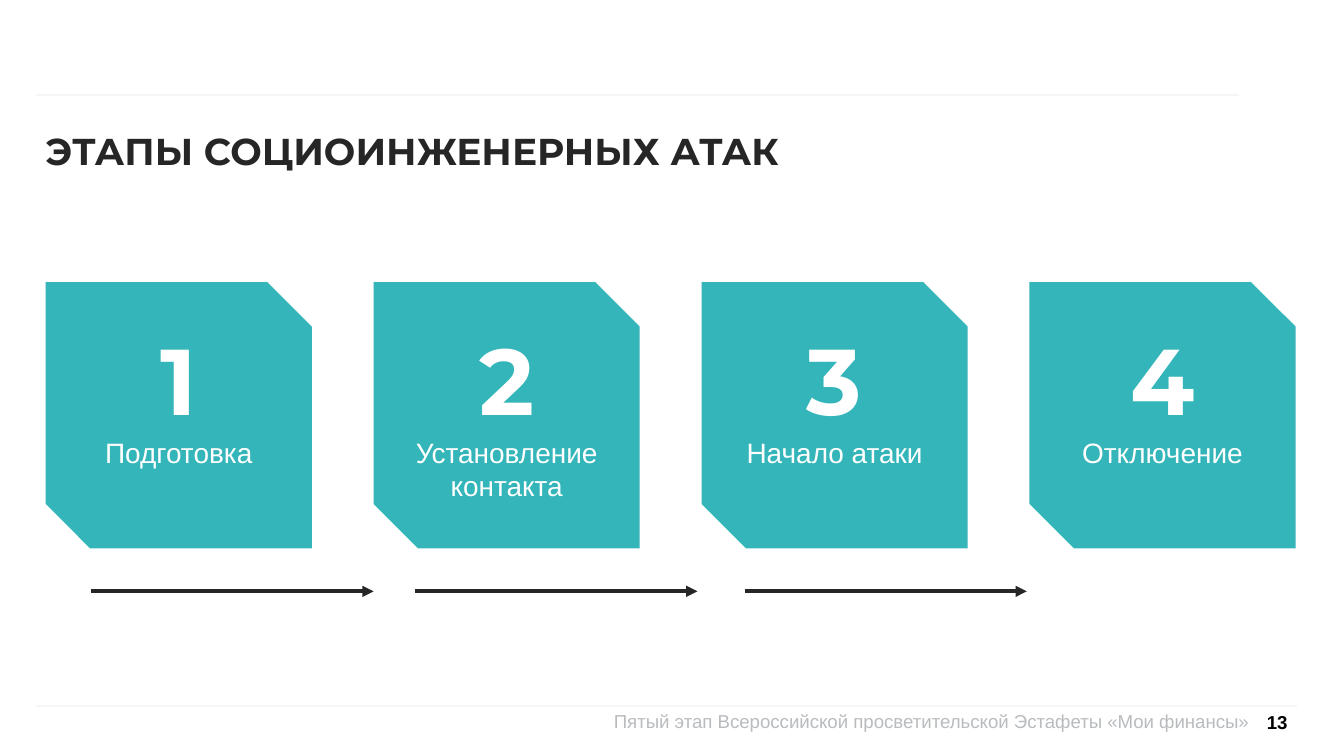
from dataclasses import dataclass
from typing import Optional

from lxml.etree import SubElement
from pptx import Presentation
from pptx.dml.color import RGBColor
from pptx.enum.shapes import MSO_CONNECTOR, MSO_SHAPE
from pptx.enum.text import MSO_ANCHOR, MSO_AUTO_SIZE, PP_ALIGN
from pptx.oxml.ns import qn
from pptx.util import Inches, Pt

COLORS = {"rule": "F5F5F5", "dark": "262626", "card": "33B5BA",
          "white": "FFFFFF", "footer": "B9BCBF", "black": "000000"}
HEADING_FONT, BODY_FONT = "Montserrat", "Arial"

CARD_LEFT, CARD_TOP, CARD_SIZE, CARD_PITCH = 0.34, 2.1, 1.98, 2.44
NUMBER_TOP, NUMBER_WIDTH = 2.4, 0.91
LABEL_TOP, LABEL_WIDTH = 3.24, 1.48
TEXT_HEIGHT = 0.4
ARROW_Y, ARROW_LENGTH = 4.4, 2.1


@dataclass(frozen=True)
class Style:
    size: float
    color: str
    font: str = BODY_FONT
    bold: bool = False
    align: PP_ALIGN = PP_ALIGN.LEFT


@dataclass(frozen=True)
class Stage:
    label: str
    arrow_start: Optional[float] = None


STAGES = [
    Stage("Подготовка", 0.68),
    Stage("Установление контакта", 3.09),
    Stage("Начало атаки", 5.54),
    Stage("Отключение"),
]

TITLE = Style(20, "dark", HEADING_FONT, True)
NUMBER = Style(50, "white", HEADING_FONT, True, PP_ALIGN.CENTER)
LABEL = Style(15, "white", align=PP_ALIGN.CENTER)
FOOTER = Style(10, "footer", align=PP_ALIGN.RIGHT)
PAGE = Style(10, "black", bold=True, align=PP_ALIGN.RIGHT)


def rgb(name: str) -> RGBColor:
    return RGBColor.from_string(COLORS[name])


def write(box, text: str, style: Style, inset: float = 0, wrap: bool = True,
          anchor: MSO_ANCHOR = MSO_ANCHOR.TOP) -> None:
    frame = box.text_frame
    frame.margin_left = frame.margin_right = Inches(inset)
    frame.margin_top = frame.margin_bottom = Inches(inset)
    frame.word_wrap = wrap
    frame.auto_size = MSO_AUTO_SIZE.NONE
    frame.vertical_anchor = anchor
    frame.text = text
    paragraph = frame.paragraphs[0]
    paragraph.alignment = style.align
    font = paragraph.runs[0].font
    font.size, font.name, font.bold = Pt(style.size), style.font, style.bold
    font.color.rgb = rgb(style.color)


def add_text(slide, left: float, top: float, width: float, height: float,
             text: str, style: Style, **options) -> None:
    box = slide.shapes.add_textbox(Inches(left), Inches(top), Inches(width), Inches(height))
    write(box, text, style, **options)


def add_line(slide, left: float, right: float, y: float, color: str,
             weight: float, arrow: bool = False) -> None:
    line = slide.shapes.add_connector(
        MSO_CONNECTOR.STRAIGHT, Inches(left), Inches(y), Inches(right), Inches(y))
    line.line.color.rgb = rgb(color)
    line.line.width = Pt(weight)
    if arrow:
        SubElement(line.line._get_or_add_ln(), qn("a:tailEnd"), type="triangle")
    SubElement(line._element.spPr, qn("a:effectLst"))


def add_stage(slide, index: int, stage: Stage) -> None:
    left = CARD_LEFT + index * CARD_PITCH
    center = left + CARD_SIZE / 2
    card = slide.shapes.add_shape(
        MSO_SHAPE.SNIP_2_DIAG_RECTANGLE,
        Inches(left), Inches(CARD_TOP), Inches(CARD_SIZE), Inches(CARD_SIZE))
    card.shadow.inherit = False
    card.fill.solid()
    card.fill.fore_color.rgb = rgb("card")
    card.line.fill.background()
    add_text(slide, center - NUMBER_WIDTH / 2, NUMBER_TOP, NUMBER_WIDTH, TEXT_HEIGHT,
             str(index + 1), NUMBER)
    add_text(slide, center - LABEL_WIDTH / 2, LABEL_TOP, LABEL_WIDTH, TEXT_HEIGHT,
             stage.label, LABEL)
    if stage.arrow_start is not None:
        add_line(slide, stage.arrow_start, stage.arrow_start + ARROW_LENGTH, ARROW_Y,
                 "dark", 2, arrow=True)


def main() -> None:
    deck = Presentation()
    # Widescreen, 16:9
    deck.slide_width = Inches(10)
    deck.slide_height = Inches(10 * 9 / 16)
    slide = deck.slides.add_slide(deck.slide_layouts[5])

    # Header and footer rules
    add_line(slide, 0.27, 9.22, 0.71, "rule", 1)
    add_line(slide, 0.27, 9.65, 5.25, "rule", 1)

    # Title
    title = slide.shapes.title
    title.left, title.top = Inches(CARD_LEFT), Inches(0.95)
    title.width, title.height = Inches(5.8), Inches(0.4)
    write(title, "ЭТАПЫ СОЦИОИНЖЕНЕРНЫХ АТАК", TITLE)

    # Attack stages
    for index, stage in enumerate(STAGES):
        add_stage(slide, index, stage)

    # Footer and page number
    add_text(slide, 3.58, 5.28, 5.71, 0.35,
             "Пятый этап Всероссийской просветительской Эстафеты «Мои финансы»", FOOTER)
    add_text(slide, 9.45, 5.23, 0.19, 0.28, "13", PAGE,
             inset=0.06, wrap=False, anchor=MSO_ANCHOR.MIDDLE)

    deck.save("out.pptx")


if __name__ == "__main__":
    main()
